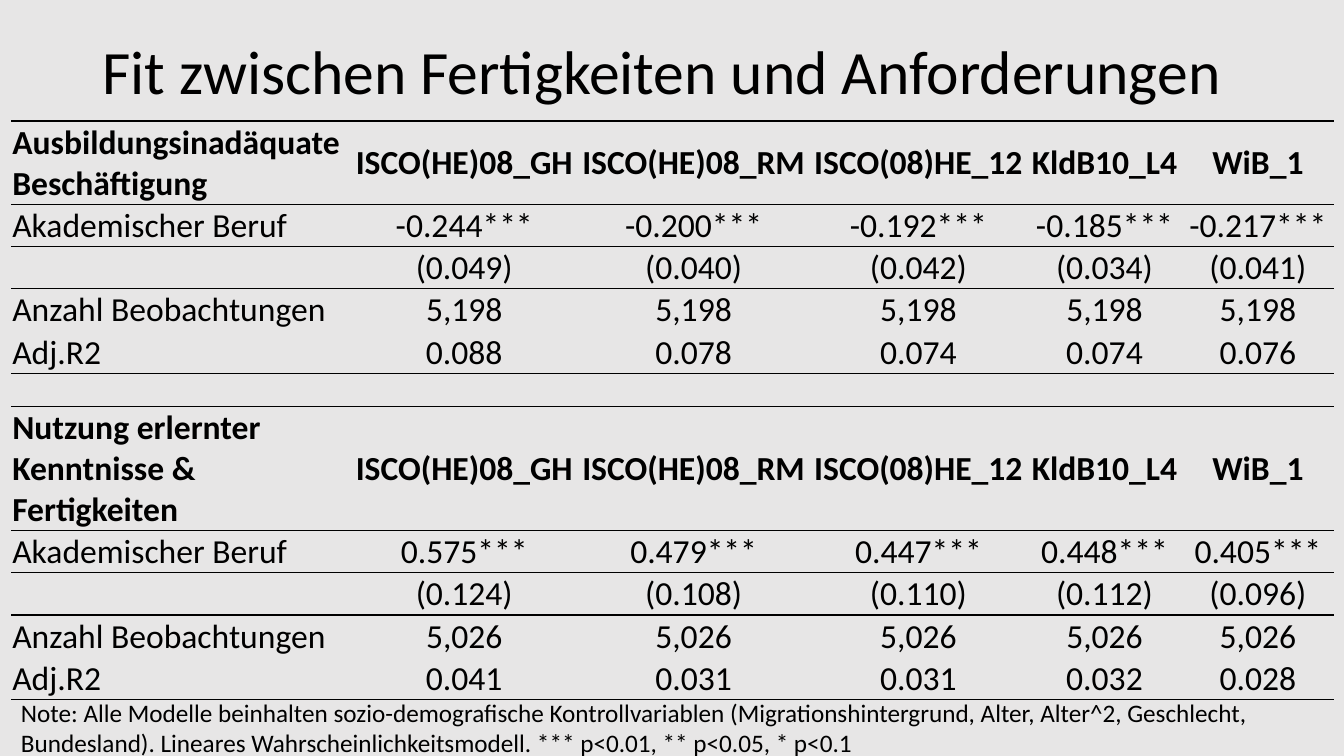
from pptx import Presentation
from pptx.dml.color import RGBColor
from pptx.enum import text
from pptx.oxml import parse_xml
from pptx.oxml.ns import nsdecls, qn
from pptx.util import Cm, Pt

# Content
TITLE = "Fit zwischen Fertigkeiten und Anforderungen"
MODELS = ["ISCO(HE)08_GH", "ISCO(HE)08_RM", "ISCO(08)HE_12", "KldB10_L4", "WiB_1"]
ROW_LABELS = ["Akademischer Beruf", "", "Anzahl Beobachtungen", "Adj.R2"]
# Each table: heading, top (cm), header height (cm), values
TABLES = [
    ("Ausbildungsinadäquate Beschäftigung", 3.05, 2.08, [
        ["-0.244***", "-0.200***", "-0.192***", "-0.185***", "-0.217***"],
        ["(0.049)", "(0.040)", "(0.042)", "(0.034)", "(0.041)"],
        ["5,198"] * 5,
        ["0.088", "0.078", "0.074", "0.074", "0.076"],
    ]),
    ("Nutzung erlernter Kenntnisse & Fertigkeiten", 10.24, 3.12, [
        ["0.575***", "0.479***", "0.447***", "0.448***", "0.405***"],
        ["(0.124)", "(0.108)", "(0.110)", "(0.112)", "(0.096)"],
        ["5,026"] * 5,
        ["0.041", "0.031", "0.031", "0.032", "0.028"],
    ]),
]
NOTE = [
    "Note: Alle Modelle beinhalten sozio-demografische Kontrollvariablen "
    "(Migrationshintergrund, Alter, Alter^2, Geschlecht,",
    "Bundesland). Lineares Wahrscheinlichkeitsmodell. *** p<0.01, ** p<0.05, * p<0.1",
]

# Style
BLACK = RGBColor(0x00, 0x00, 0x00)
GREY = RGBColor(0xE7, 0xE6, 0xE6)
FONT = "Calibri"
NO_STYLE = "{2D5ABB26-0587-4C30-8999-92F81FD0307C}"
LEFT = 0.28
COLUMNS = [8.56, 5.72, 5.84, 5.49, 3.89, 3.84]
ROW_HEIGHT = 1.06
RULED_BELOW = {0, 1, 4}


def add_run(p, words, size, bold=False):
    r = p.add_run()
    r.text = words
    r.font.name = FONT
    r.font.size = Pt(size)
    r.font.bold = bold
    r.font.color.rgb = BLACK


def add_border(cell, side):
    cell._tc.get_or_add_tcPr().append(parse_xml(
        f'<a:{side} {nsdecls("a")} w="12700"><a:solidFill>'
        f'<a:srgbClr val="{BLACK}"/></a:solidFill></a:{side}>'))


def fill_cell(cell, words, row, col):
    cell.margin_left = cell.margin_right = cell.margin_top = Cm(0.03)
    cell.margin_bottom = 0
    cell.vertical_anchor = text.MSO_ANCHOR.MIDDLE
    if row == 0 or row - 1 in RULED_BELOW:
        add_border(cell, "lnT")
    if row in RULED_BELOW:
        add_border(cell, "lnB")
    cell.fill.background()
    p = cell.text_frame.paragraphs[0]
    p.alignment = text.PP_ALIGN.CENTER if col else text.PP_ALIGN.LEFT
    if words:
        add_run(p, words, 24, bold=row == 0)


def add_result_table(s, heading, top, header_height, values):
    rows = [[heading] + MODELS]
    rows += [[label] + line for label, line in zip(ROW_LABELS, values)]
    heights = [header_height] + [ROW_HEIGHT] * len(values)
    table = s.shapes.add_table(len(rows), len(COLUMNS), Cm(LEFT), Cm(top),
                               Cm(sum(COLUMNS)), Cm(sum(heights))).table
    table._tbl.tblPr.find(qn("a:tableStyleId")).text = NO_STYLE
    table.first_row = table.horz_banding = False
    for column, width in zip(table.columns, COLUMNS):
        column.width = Cm(width)
    for i, (line, height) in enumerate(zip(rows, heights)):
        table.rows[i].height = Cm(height)
        for j, words in enumerate(line):
            fill_cell(table.cell(i, j), words, i, j)


def main():
    prs = Presentation()
    prs.slide_width, prs.slide_height = Cm(33.87), Cm(19.05)
    s = prs.slides.add_slide(prs.slide_layouts[5])
    s.background.fill.solid()
    s.background.fill.fore_color.rgb = GREY

    # Title
    title = s.shapes.title
    title.left, title.top, title.width, title.height = Cm(2.33), Cm(0.03), Cm(29.21), Cm(3.68)
    tf = title.text_frame
    tf.vertical_anchor = text.MSO_ANCHOR.MIDDLE
    p = tf.paragraphs[0]
    p.alignment = text.PP_ALIGN.LEFT
    p.line_spacing = 0.9
    add_run(p, TITLE, 44)

    # Result tables
    for result in TABLES:
        add_result_table(s, *result)

    # Note
    tf = s.shapes.add_textbox(Cm(LEFT), Cm(17.45), Cm(32.08), Cm(1.8)).text_frame
    tf.word_wrap = False
    tf.auto_size = text.MSO_AUTO_SIZE.SHAPE_TO_FIT_TEXT
    for i, line in enumerate(NOTE):
        p = tf.add_paragraph() if i else tf.paragraphs[0]
        add_run(p, line, 18)

    prs.save("out.pptx")


if __name__ == "__main__":
    main()
